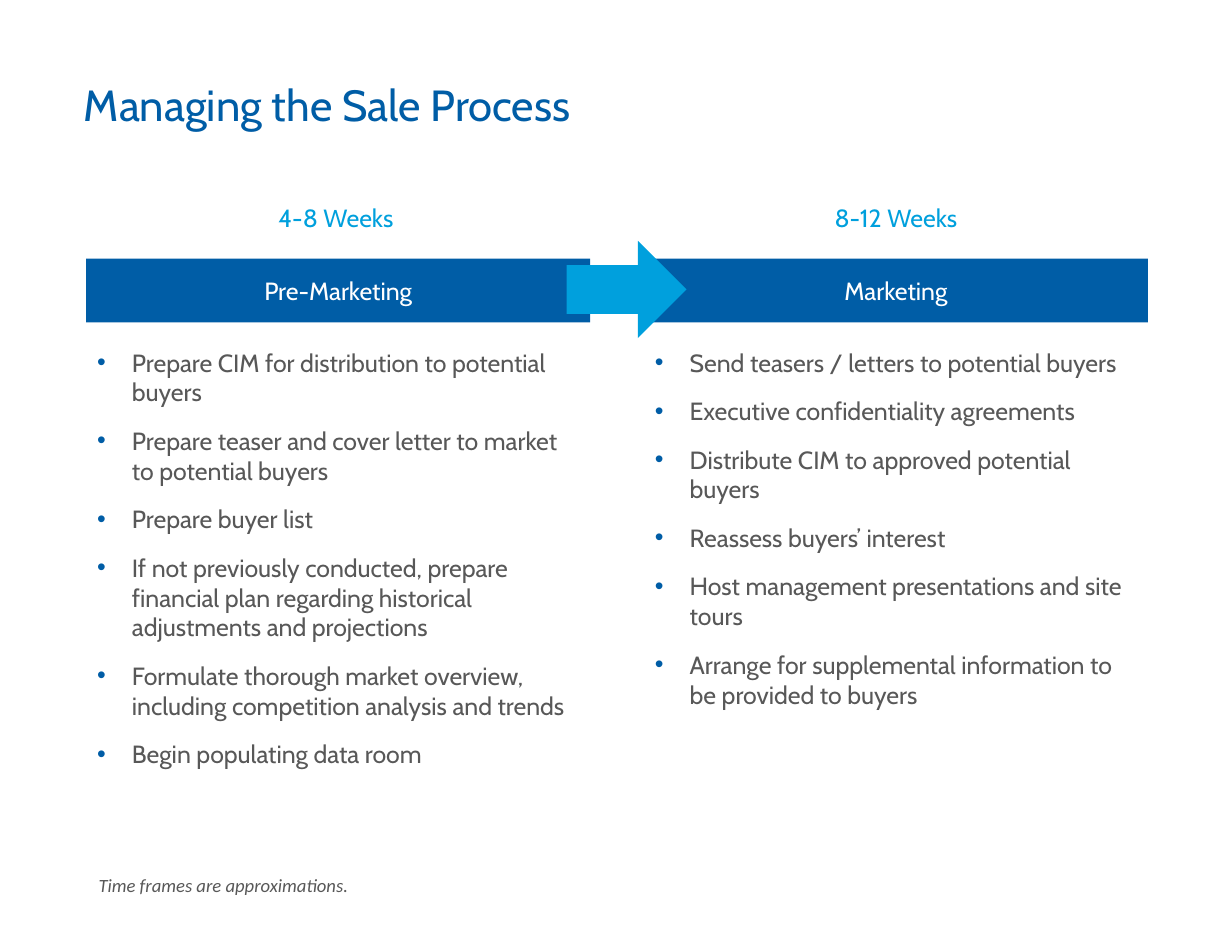
from lxml.etree import SubElement as Sub
from pptx import Presentation
from pptx.dml.color import RGBColor as Rgb
from pptx.enum.shapes import MSO_SHAPE as Kind
from pptx.enum.text import MSO_ANCHOR as Anchor, PP_ALIGN as Align
from pptx.oxml.ns import qn
from pptx.util import Inches, Pt

# Content
TITLE = "Managing the Sale Process"
NOTE = "Time frames are approximations."
STAGES = [
    ("4-8 Weeks", "Pre-Marketing", [
        "Prepare CIM for distribution to potential buyers",
        "Prepare teaser and cover letter to market to potential buyers",
        "Prepare buyer list",
        "If not previously conducted, prepare financial plan regarding "
        "historical adjustments and projections",
        "Formulate thorough market overview, including competition "
        "analysis and trends",
        "Begin populating data room",
    ]),
    ("8-12 Weeks", "Marketing", [
        "Send teasers / letters to potential buyers",
        "Executive confidentiality agreements",
        "Distribute CIM to approved potential buyers",
        "Reassess buyers’ interest",
        "Host management presentations and site tours",
        "Arrange for supplemental information to be provided to buyers",
    ]),
]
COLORS = {"blue": "005DA6", "sky": "00A0DD", "gray": "585858", "white": "FFFFFF"}

# Grid: two equal columns inside the side margins
WIDE, HIGH = 11, 8.5
EDGE = 0.75
COL = 4.5
STEP = WIDE - 2 * EDGE - COL
NUDGE = 0.02  # the first bar and list sit slightly right of the margin
BAR_TOP, BAR_HIGH = 2.31, 0.57
LIST_TOP, LIST_HIGH = 3.1, 3.44

deck = Presentation()
deck.slide_width, deck.slide_height = Inches(WIDE), Inches(HIGH)
slide = deck.slides.add_slide(deck.slide_layouts[6])


def add_bullet(para):
    props = para._p.get_or_add_pPr()
    props.set("marL", str(Inches(0.31)))
    props.set("indent", str(-Inches(0.31)))
    tint = Sub(props, qn("a:buClr"))
    Sub(tint, qn("a:srgbClr"), val=COLORS["blue"])
    Sub(props, qn("a:buFont"), typeface="Arial")
    Sub(props, qn("a:buChar"), char="•")


def add_text(text, box, shape=None, size=16, color="gray", font="Cabin",
             align=Align.LEFT, anchor=Anchor.TOP, pad=0, line=None,
             after=None, italic=None, bullet=False):
    """Write one string or a list of paragraphs into a box or given shape."""
    shape = shape or slide.shapes.add_textbox(*map(Inches, box))
    frame = shape.text_frame
    frame.word_wrap = True
    frame.vertical_anchor = anchor
    frame.margin_left = frame.margin_right = Inches(pad)
    frame.margin_top = frame.margin_bottom = 0
    for i, part in enumerate([text] if isinstance(text, str) else text):
        para = frame.add_paragraph() if i else frame.paragraphs[0]
        para.alignment = align
        if line:
            para.line_spacing = line
        if after:
            para.space_after = Pt(after)
        if bullet:
            add_bullet(para)
        run = para.add_run()
        run.text = part
        run.font.name, run.font.size = font, Pt(size)
        run.font.italic = italic
        run.font.color.rgb = Rgb.from_string(COLORS[color])


def add_block(kind, box, color):
    shape = slide.shapes.add_shape(kind, *map(Inches, box))
    shape.shadow.inherit = False
    shape.fill.solid()
    shape.fill.fore_color.rgb = Rgb.from_string(COLORS[color])
    shape.line.fill.background()
    return shape


# Title
add_text(TITLE, (EDGE, 0.75, WIDE - 2 * EDGE, 0.42), size=28, color="blue",
         anchor=Anchor.MIDDLE, line=0.9)

# Stages: time frame, bar, list
mid = {"align": Align.CENTER, "anchor": Anchor.MIDDLE}
for i, (weeks, name, tasks) in enumerate(STAGES):
    left = EDGE + i * STEP
    inner = left if i else left + NUDGE
    add_text(weeks, (left, 1.8, COL, 0.28), color="sky", **mid)
    bar = (inner, BAR_TOP, COL, BAR_HIGH)
    add_text(name, bar, shape=add_block(Kind.RECTANGLE, bar, "blue"),
             color="white", pad=0.1, **mid)
    add_text(tasks, (inner, LIST_TOP, COL, LIST_HIGH), pad=0.1, after=12,
             bullet=True)

# Arrow between the bars
add_block(Kind.RIGHT_ARROW, (5.06, 2.15, 1.07, 0.87), "sky")

# Footnote
add_text(NOTE, (0.88, 7.8, 6.37, 0.2), size=12, font="Calibri", italic=True)

deck.save("out.pptx")
